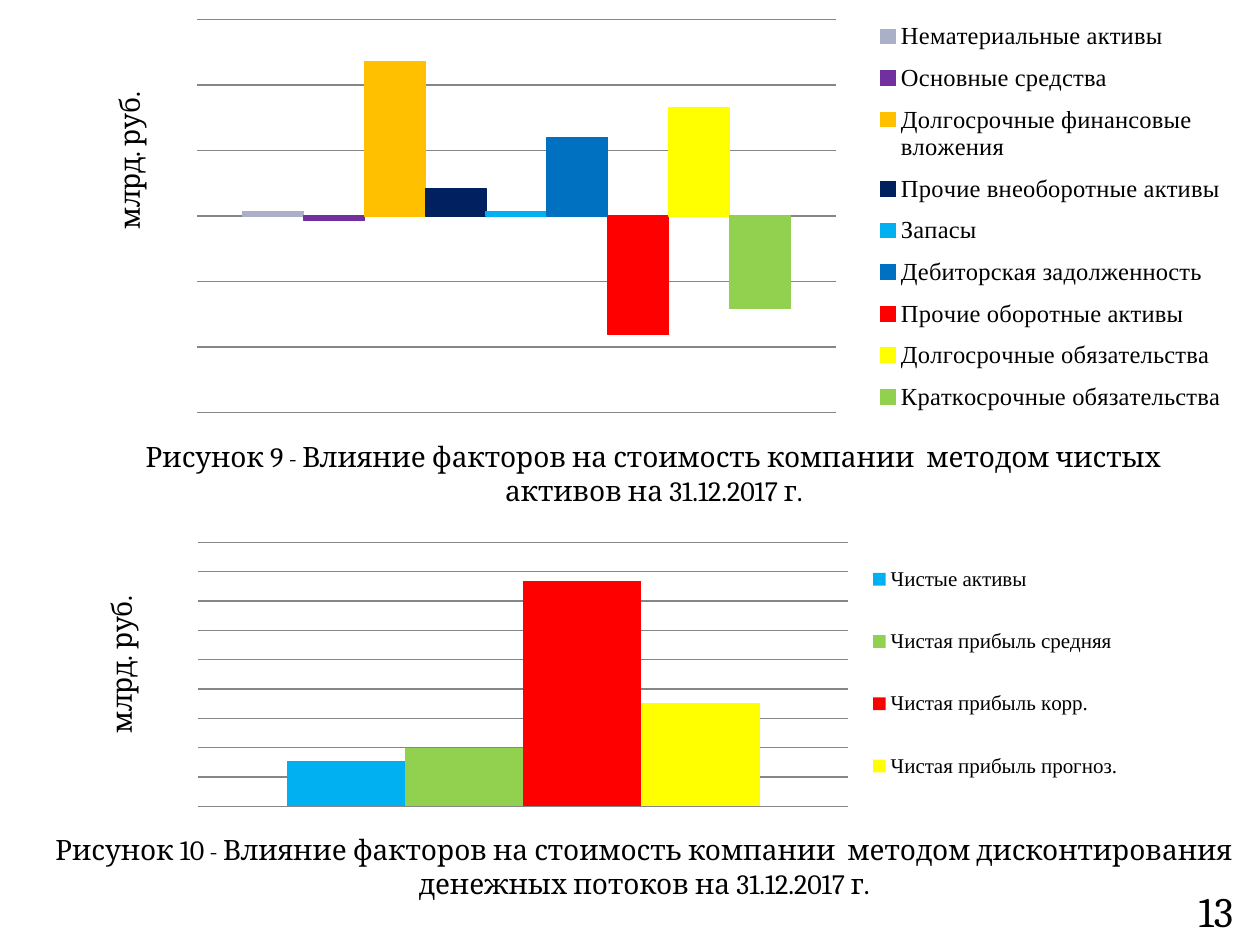
"""Build the slide with the two factor charts and their captions."""
from dataclasses import dataclass

import pptx
import pptx.chart.data
import pptx.dml.color
import pptx.enum.chart
import pptx.enum.shapes
import pptx.enum.text
import pptx.oxml
import pptx.oxml.ns
import pptx.util

COLUMNS, ROWS = 100, 75
SERIF, LEGEND_SERIF, SANS = "Cambria", "Times New Roman", "Cabin"
BLACK, WHITE, GRID_GREY = "000000", "FFFFFF", "868686"
UNIT = "млрд. руб."


@dataclass(frozen=True)
class Box:
    """An area in grid columns and rows."""
    column: float
    row: float
    columns: float
    rows: float


@dataclass(frozen=True)
class Factor:
    """One column of a chart."""
    name: str
    value: float
    color: str


@dataclass(frozen=True)
class FactorChart:
    """A chart whose inner parts are percentages of its own size."""
    box: Box
    factors: tuple[Factor, ...]
    low: float
    high: float
    steps: int
    plot: tuple[float, ...]
    key: tuple[float, ...]
    unit_at: tuple[float, ...]
    key_size: float
    outlined: bool


@dataclass(frozen=True)
class Caption:
    """A figure number with its description."""
    box: Box
    number: str
    text: str


NET_ASSETS = FactorChart(
    Box(5.5, 0, 92.2, 34.4),
    (
        Factor("Нематериальные активы", 3, "AAB0C8"),
        Factor("Основные средства", -3, "7030A0"),
        Factor("Долгосрочные финансовые вложения", 100, "FFC000"),
        Factor("Прочие внеоборотные активы", 18, "002060"),
        Factor("Запасы", 3, "00B0F0"),
        Factor("Дебиторская задолженность", 51, "0070C0"),
        Factor("Прочие оборотные активы", -77, "FF0000"),
        Factor("Долгосрочные обязательства", 70, "FFFF00"),
        Factor("Краткосрочные обязательства", -60, "92D050"),
    ),
    -127.5, 127.5, 6, (11, 4.5, 55, 90.7), (69, 2, 31, 96), (3.2, 20), 14, True)

CASH_FLOWS = FactorChart(
    Box(5.5, 37.5, 89.1, 32.3),
    (
        Factor("Чистые активы", 20, "00B0F0"),
        Factor("Чистая прибыль средняя", 26, "92D050"),
        Factor("Чистая прибыль корр.", 100, "FF0000"),
        Factor("Чистая прибыль прогноз.", 46, "FFFF00"),
    ),
    0, 117, 9, (11.5, 17.2, 57.9, 64.9), (70, 13.7, 25, 71), (2.6, 29), 12, False)

CAPTIONS = (
    Caption(Box(7, 34.4, 89.8, 9.4), "Рисунок 9",
            "Влияние факторов на стоимость компании  методом чистых активов на 31.12.2017 г."),
    Caption(Box(2.3, 65.6, 97.7, 9.4), "Рисунок 10",
            "Влияние факторов на стоимость компании  методом дисконтирования "
            "денежных потоков на 31.12.2017 г."),
)


def rgb(color: str) -> pptx.dml.color.RGBColor:
    """Turn a hex string into a colour."""
    return pptx.dml.color.RGBColor.from_string(color)


def apply(target, **values) -> None:
    """Set each given attribute on the target."""
    for name, value in values.items():
        setattr(target, name, value)


def style(font, size: float, name: str) -> None:
    """Give a font its size, face and black colour."""
    apply(font, size=pptx.util.Pt(size), name=name, bold=False)
    font.color.rgb = rgb(BLACK)


def area(deck, box: Box) -> tuple[int, ...]:
    """Turn a grid box into slide lengths."""
    column, row = deck.slide_width / COLUMNS, deck.slide_height / ROWS
    return tuple(round(length) for length in (
        box.column * column, box.row * row, box.columns * column, box.rows * row))


def layout(percents: tuple[float, ...], inner: bool = False):
    """Make a manual layout from percentages of the chart."""
    target = '<c:layoutTarget val="inner"/>' if inner else ""
    modes = '<c:xMode val="edge"/><c:yMode val="edge"/>'
    lengths = "".join(f'<c:{name} val="{share / 100:.3f}"/>'
                      for name, share in zip("xywh", percents))
    return pptx.oxml.parse_xml(
        f'<c:layout {pptx.oxml.ns.nsdecls("c")}><c:manualLayout>'
        f"{target}{modes}{lengths}</c:manualLayout></c:layout>")


def add_factor_chart(deck, slide, figure: FactorChart) -> None:
    """Draw a column chart with hidden axes, a unit label and a legend."""
    data = pptx.chart.data.CategoryChartData()
    data.categories = ["1"]
    for factor in figure.factors:
        data.add_series(factor.name, [factor.value])
    chart = slide.shapes.add_chart(
        pptx.enum.chart.XL_CHART_TYPE.COLUMN_CLUSTERED, *area(deck, figure.box), data).chart
    apply(chart, has_title=False, has_legend=True)
    style(chart.font, 10, SANS)
    apply(chart.legend, position=pptx.enum.chart.XL_LEGEND_POSITION.RIGHT,
          include_in_layout=True)
    style(chart.legend.font, figure.key_size, LEGEND_SERIF)

    chart.category_axis.visible = False
    axis = chart.value_axis
    apply(axis, visible=False, has_major_gridlines=True, has_title=True,
          minimum_scale=figure.low, maximum_scale=figure.high,
          major_unit=(figure.high - figure.low) / figure.steps)
    gridline = axis.major_gridlines.format.line
    gridline.color.rgb = rgb(GRID_GREY)
    gridline.width = pptx.util.Pt(0.75)
    unit = axis.axis_title.text_frame
    unit.text = UNIT
    style(unit.paragraphs[0].runs[0].font, 16, SERIF)

    apply(chart.plots[0], gap_width=150, vary_by_categories=False)
    for series, factor in zip(chart.plots[0].series, figure.factors):
        series.invert_if_negative = False
        series.format.fill.solid()
        series.format.fill.fore_color.rgb = rgb(factor.color)
        if figure.outlined:
            series.format.line.color.rgb = rgb(factor.color)
            series.format.line.width = pptx.util.Pt(0.75)

    space = chart.element
    for old in space.xpath(".//c:plotArea/c:layout | .//c:legend/c:layout | .//c:title/c:layout"):
        old.getparent().remove(old)
    space.xpath(".//c:plotArea")[0].insert(0, layout(figure.plot, inner=True))
    space.xpath(".//c:legend/c:legendPos")[0].addnext(layout(figure.key))
    space.xpath(".//c:valAx/c:title/c:tx")[0].addnext(layout(figure.unit_at))
    turned = space.xpath(".//c:valAx/c:title//a:bodyPr")[0]
    turned.set("rot", "-5400000")
    turned.set("vert", "horz")


def add_caption(deck, slide, caption: Caption) -> None:
    """Write a centred figure caption."""
    frame = slide.shapes.add_textbox(*area(deck, caption.box)).text_frame
    frame.word_wrap = True
    line = frame.paragraphs[0]
    line.alignment = pptx.enum.text.PP_ALIGN.CENTER
    for text, size in ((caption.number, 16), (" - ", 14), (caption.text, 16)):
        run = line.add_run()
        run.text = text
        style(run.font, size, SERIF)


def add_page_number(deck, slide, number: str, box: Box) -> None:
    """Write the page number on a white block."""
    block = slide.shapes.add_shape(
        pptx.enum.shapes.MSO_SHAPE.RECTANGLE, *area(deck, box))
    block.shadow.inherit = False
    block.fill.solid()
    block.fill.fore_color.rgb = rgb(WHITE)
    block.line.fill.background()
    block.text_frame.vertical_anchor = pptx.enum.text.MSO_ANCHOR.MIDDLE
    line = block.text_frame.paragraphs[0]
    line.alignment = pptx.enum.text.PP_ALIGN.CENTER
    run = line.add_run()
    run.text = number
    style(run.font, 24, SERIF)


def main() -> None:
    """Build and save the deck."""
    deck = pptx.Presentation()
    apply(deck, slide_width=pptx.util.Inches(10), slide_height=pptx.util.Inches(7.5))
    slide = deck.slides.add_slide(deck.slide_layouts.get_by_name("Blank"))
    add_page_number(deck, slide, "13", Box(93, 69.5, 7, 5.5))
    for caption, figure in zip(CAPTIONS, (CASH_FLOWS, NET_ASSETS)):
        add_caption(deck, slide, caption)
        add_factor_chart(deck, slide, figure)
    deck.save("out.pptx")


if __name__ == "__main__":
    main()
